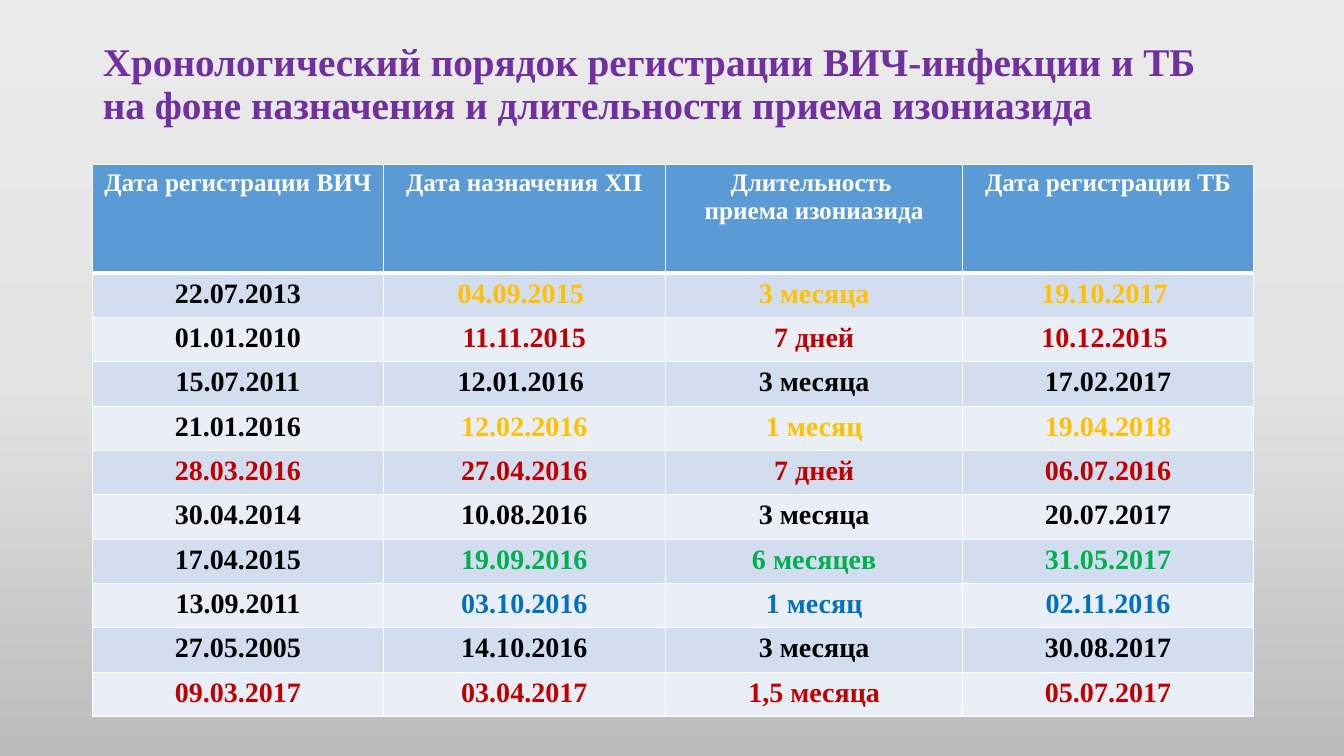
from copy import deepcopy

from lxml.etree import SubElement
from pptx import Presentation
from pptx.dml.color import RGBColor
from pptx.enum.text import MSO_ANCHOR, PP_ALIGN
from pptx.oxml.ns import qn
from pptx.util import Inches, Pt

WHITE = RGBColor(0xFF, 0xFF, 0xFF)
BLACK = RGBColor(0x00, 0x00, 0x00)
PURPLE = RGBColor(0x70, 0x30, 0xA0)
AMBER = RGBColor(0xFF, 0xC0, 0x00)
RED = RGBColor(0xC0, 0x00, 0x00)
GREEN = RGBColor(0x00, 0xB0, 0x50)
BLUE = RGBColor(0x00, 0x70, 0xC0)
HEADER_FILL = RGBColor(0x5B, 0x9B, 0xD5)
BAND_FILLS = (RGBColor(0xEA, 0xEF, 0xF7), RGBColor(0xD2, 0xDE, 0xEF))
BACKGROUND_STOPS = (
    (0, RGBColor(0xEB, 0xEA, 0xEA)),
    (0.5, RGBColor(0xE4, 0xE3, 0xE3)),
    (1, RGBColor(0xBD, 0xBC, 0xBC)),
)

TITLE = ("Хронологический порядок регистрации ВИЧ-инфекции и ТБ "
         "на фоне назначения и длительности приема изониазида")
HEADERS = ("Дата регистрации ВИЧ", "Дата назначения ХП",
           "Длительность \nприема изониазида", "Дата регистрации ТБ")
# Each patient: colour of the HIV date, colour of the other cells, cell texts
PATIENTS = (
    (BLACK, AMBER, ("22.07.2013", "04.09.2015 ", "3 месяца", "19.10.2017 ")),
    (BLACK, RED, ("01.01.2010", "11.11.2015", "7 дней", "10.12.2015 ")),
    (BLACK, BLACK, ("15.07.2011", "12.01.2016 ", "3 месяца", "17.02.2017")),
    (BLACK, AMBER, ("21.01.2016", "12.02.2016", "1 месяц", "19.04.2018")),
    (RED, RED, ("28.03.2016", "27.04.2016", "7 дней", "06.07.2016")),
    (BLACK, BLACK, ("30.04.2014", "10.08.2016", "3 месяца", "20.07.2017")),
    (BLACK, GREEN, ("17.04.2015", "19.09.2016", "6 месяцев", "31.05.2017")),
    (BLACK, BLUE, ("13.09.2011", "03.10.2016", "1 месяц", "02.11.2016")),
    (BLACK, BLACK, ("27.05.2005", "14.10.2016", "3 месяца", "30.08.2017")),
    (RED, RED, ("09.03.2017", "03.04.2017", "1,5 месяца", "05.07.2017")),
)
COLUMN_WIDTHS = (2.88, 2.8, 2.95, 2.88)
HEADER_HEIGHT, ROW_HEIGHT = 1.08, 0.44


class SlideBuilder:
    """Holds the text style and the slide being filled."""

    base_font = {"name": "Times New Roman", "bold": True}

    def __init__(self, deck):
        self.slide = deck.slides.add_slide(deck.slide_layouts[5])

    def fill_text(self, frame, text, size, color, **paragraph_format):
        """Fill a text frame, one paragraph for each line of text."""
        frame.text = text
        font_format = {**self.base_font, "size": Pt(size)}
        for para in frame.paragraphs:
            for name, value in paragraph_format.items():
                setattr(para, name, value)
            for span in para.runs:
                for name, value in font_format.items():
                    setattr(span.font, name, value)
                span.font.color.rgb = color

    def background(self, stops):
        fill = self.slide.background.fill
        fill.gradient()
        fill.gradient_angle = 270
        stop_list = next(self.slide.element.iter(qn("a:gsLst")))
        while len(stop_list) < len(stops):
            stop_list.append(deepcopy(stop_list[-1]))
        for stop, (position, color) in zip(fill.gradient_stops, stops):
            stop.position = position
            stop.color.rgb = color

    def title(self, text, left, top, width, height):
        box = self.slide.shapes.title
        place = {"left": left, "top": top, "width": width, "height": height}
        for name, value in place.items():
            setattr(box, name, Inches(value))
        box.text_frame.word_wrap = True
        box.text_frame.vertical_anchor = MSO_ANCHOR.MIDDLE
        self.fill_text(box.text_frame, text, 28, PURPLE,
                       alignment=PP_ALIGN.LEFT, line_spacing=0.9)

    def borders(self, cell, top, bottom):
        """Draw white cell borders; top and bottom are widths in points."""
        properties = cell._tc.get_or_add_tcPr()
        widths = {"a:lnL": 1, "a:lnR": 1, "a:lnT": top, "a:lnB": bottom}
        for tag, width in widths.items():
            line = SubElement(properties, qn(tag), w=str(Pt(width)))
            solid = SubElement(line, qn("a:solidFill"))
            SubElement(solid, qn("a:srgbClr"), val=str(WHITE))

    def cell(self, cell, text, size, color, fill, top=1, bottom=1):
        self.borders(cell, top, bottom)
        cell.fill.solid()
        cell.fill.fore_color.rgb = fill
        self.fill_text(cell.text_frame, text, size, color,
                       alignment=PP_ALIGN.CENTER)

    def table(self, left, top):
        heights = [HEADER_HEIGHT] + [ROW_HEIGHT] * len(PATIENTS)
        table = self.slide.shapes.add_table(
            len(heights), len(COLUMN_WIDTHS), Inches(left), Inches(top),
            Inches(sum(COLUMN_WIDTHS)), Inches(sum(heights))).table
        for column, width in zip(table.columns, COLUMN_WIDTHS):
            column.width = Inches(width)
        for row, height in zip(table.rows, heights):
            row.height = Inches(height)
        for column, text in enumerate(HEADERS):
            self.cell(table.cell(0, column), text, 18, WHITE, HEADER_FILL,
                      bottom=3)
        for row, (first, other, texts) in enumerate(PATIENTS, start=1):
            for column, text in enumerate(texts):
                self.cell(table.cell(row, column), text, 20,
                          other if column else first, BAND_FILLS[row % 2],
                          top=3 if row == 1 else 1)


def main():
    deck = Presentation()
    deck.slide_width, deck.slide_height = Inches(13.33), Inches(7.5)
    builder = SlideBuilder(deck)
    builder.background(BACKGROUND_STOPS)
    builder.title(TITLE, 0.92, 0.2, 11.5, 1.29)
    builder.table(0.92, 1.63)
    deck.save("out.pptx")


if __name__ == "__main__":
    main()
